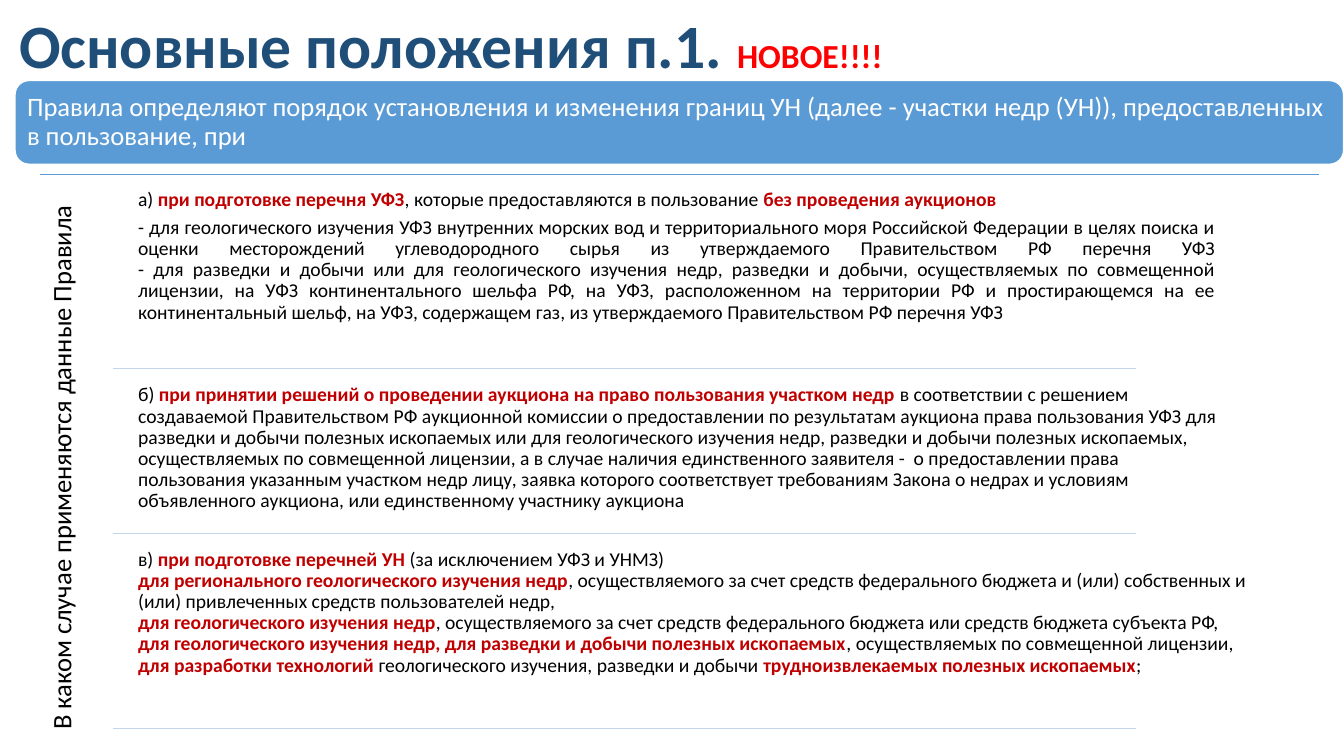
from lxml.etree import SubElement
from pptx import Presentation
from pptx.dml.color import RGBColor
from pptx.enum.shapes import MSO_CONNECTOR, MSO_SHAPE
from pptx.enum.text import MSO_ANCHOR, MSO_AUTO_SIZE, PP_ALIGN
from pptx.oxml.ns import qn
from pptx.util import Cm, Pt

COLORS = {
    "title": "1F4E79", "alert": "FF0000", "accent": "C00000", "text": "000000",
    "blue": "5B9BD5", "rule": "C4D5EB", "white": "FFFFFF",
}

# Text between asterisks is highlighted
SECTIONS = [
    # top, width, height, alignment, space after, paragraphs
    (4.62, 27.46, 4.67, PP_ALIGN.JUSTIFY, 5, [
        "а) *при подготовке перечня УФЗ*, которые предоставляются в пользование "
        "*без проведения аукционов *",
        "- для геологического изучения УФЗ внутренних морских вод и территориального моря "
        "Российской Федерации в целях поиска и оценки месторождений углеводородного сырья "
        "из утверждаемого Правительством РФ перечня УФЗ\n"
        "- для разведки и добычи или для геологического изучения недр, разведки и добычи, "
        "осуществляемых по совмещенной лицензии, на УФЗ континентального шельфа РФ, на УФЗ, "
        "расположенном на территории РФ и простирающемся на ее континентальный шельф, "
        "на УФЗ, содержащем газ, из утверждаемого Правительством РФ перечня УФЗ",
    ]),
    (9.55, 27.86, 3.89, PP_ALIGN.LEFT, 5, [
        "б) *при принятии решений о проведении аукциона на право пользования участком недр *"
        "в соответствии с решением создаваемой Правительством РФ аукционной комиссии "
        "о предоставлении по результатам аукциона права пользования УФЗ для разведки и добычи "
        "полезных ископаемых или для геологического изучения недр, разведки и добычи полезных "
        "ископаемых, осуществляемых по совмещенной лицензии, а в случае наличия единственного "
        "заявителя -  о предоставлении права пользования указанным участком недр лицу, заявка "
        "которого соответствует требованиям Закона о недрах и условиям объявленного аукциона, "
        "или единственному участнику аукциона",
    ]),
    (13.69, 28.73, 4.67, PP_ALIGN.LEFT, 0, [
        "в) *при подготовке перечней УН *(за исключением УФЗ и УНМЗ)",
        "*для регионального геологического изучения недр*, осуществляемого за счет средств "
        "федерального бюджета и (или) собственных и (или) привлеченных средств "
        "пользователей недр,",
        "*для геологического изучения недр*, осуществляемого за счет средств федерального "
        "бюджета или средств бюджета субъекта РФ,",
        "*для геологического изучения недр, для разведки и добычи полезных ископаемых*, "
        "осуществляемых по совмещенной лицензии,",
        "*для разработки технологий *геологического изучения, разведки и добычи "
        "*трудноизвлекаемых полезных ископаемых*;",
    ]),
]


def paint(font, color):
    font.color.rgb = RGBColor.from_string(COLORS[color])


class Deck:
    font = "Calibri"

    def __init__(self):
        self.prs = Presentation()
        self.prs.slide_width, self.prs.slide_height = Cm(33.87), Cm(19.05)
        # Comparison layout: a title and four body placeholders
        self.slide = self.prs.slides.add_slide(self.prs.slide_layouts[4])

    def place(self, shape, left, top, width, height):
        shape.left, shape.top = Cm(left), Cm(top)
        shape.width, shape.height = Cm(width), Cm(height)

    def frame(self, shape, side, edge, anchor):
        box = shape.text_frame
        box.word_wrap, box.auto_size = True, MSO_AUTO_SIZE.NONE
        box.vertical_anchor = anchor
        box.margin_left = box.margin_right = Cm(side)
        box.margin_top = box.margin_bottom = Cm(edge)
        return box

    def style(self, para, size, color, align=PP_ALIGN.LEFT, after=0):
        para.alignment, para.line_spacing = align, 0.9
        para.space_before, para.space_after = Pt(0), Pt(after)
        para.font.name, para.font.size = self.font, Pt(size)
        para.font.bold = False
        paint(para.font, color)

    def title(self, text, note):
        shape = self.slide.shapes.title
        self.place(shape, 0.23, 0.18, 29.21, 2.11)
        para = self.frame(shape, 0.25, 0.13, MSO_ANCHOR.MIDDLE).paragraphs[0]
        self.style(para, 44, "title")
        para.font.bold = True
        para.add_run().text = text
        run = para.add_run()
        run.text, run.font.size = note, Pt(24)
        paint(run.font, "alert")

    def banner(self, text):
        shape = self.slide.shapes.add_shape(
            MSO_SHAPE.ROUNDED_RECTANGLE, Cm(0.38), Cm(2.03), Cm(33.48), Cm(2.11))
        shape.shadow.inherit = False
        shape.fill.solid()
        paint_fill = RGBColor.from_string(COLORS["blue"])
        shape.fill.fore_color.rgb = paint_fill
        shape.line.color.rgb = RGBColor.from_string(COLORS["white"])
        shape.line.width = Pt(1)
        para = self.frame(shape, 0.2, 0.2, MSO_ANCHOR.MIDDLE).paragraphs[0]
        para.text = text
        self.style(para, 19, "white")

    def side(self, text):
        shape = self.slide.shapes.add_textbox(Cm(1.02), Cm(4.39), Cm(1.83), Cm(14.2))
        box = self.frame(shape, 0.2, 0.2, MSO_ANCHOR.TOP)
        box._txBody.bodyPr.set("vert", "vert270")
        box.paragraphs[0].text = text
        self.style(box.paragraphs[0], 19, "text")

    def rule(self, left, right, top, color):
        line = self.slide.shapes.add_connector(
            MSO_CONNECTOR.STRAIGHT, Cm(left), Cm(top), Cm(right), Cm(top))
        line.line.color.rgb = RGBColor.from_string(COLORS[color])
        line.line.width = Pt(1)
        SubElement(line._element.spPr, qn("a:effectLst"))

    def section(self, shape, top, width, height, align, after, texts):
        self.place(shape, 3.33, top, width, height)
        box = self.frame(shape, 0.15, 0.15, MSO_ANCHOR.TOP)
        for num, text in enumerate(texts):
            para = box.add_paragraph() if num else box.paragraphs[0]
            self.style(para, 14, "text", align, after)
            self.plain(para)
            self.fill(para, text)

    def plain(self, para):
        """Take the bullet and the indent off a list paragraph."""
        props = para._p.get_or_add_pPr()
        props.set("marL", "0")
        props.set("indent", "0")
        props.find(qn("a:defRPr")).addprevious(SubElement(props, qn("a:buNone")))

    def fill(self, para, text):
        for num, part in enumerate(text.split("*")):
            for row, words in enumerate(part.split("\n")):
                if row:
                    para.add_line_break()
                if words:
                    run = para.add_run()
                    run.text = words
                    if num % 2:
                        run.font.bold = True
                        paint(run.font, "accent")


def main():
    deck = Deck()

    # Heading
    deck.title("Основные положения п.1. ", "НОВОЕ!!!!")
    deck.banner("Правила определяют порядок установления и изменения границ УН "
                "(далее - участки недр (УН)), предоставленных в пользование, при")

    # Side label under the top rule
    deck.rule(1.02, 33.25, 4.39, "blue")
    deck.side("В каком случае применяются данные Правила")

    # Sections, each closed by a rule
    *bodies, spare = list(deck.slide.placeholders)[1:]
    spare._element.getparent().remove(spare._element)
    for shape, data in zip(bodies, SECTIONS):
        deck.section(shape, *data)
        deck.rule(2.84, 28.63, data[0] + data[2], "rule")

    deck.prs.save("out.pptx")


if __name__ == "__main__":
    main()
